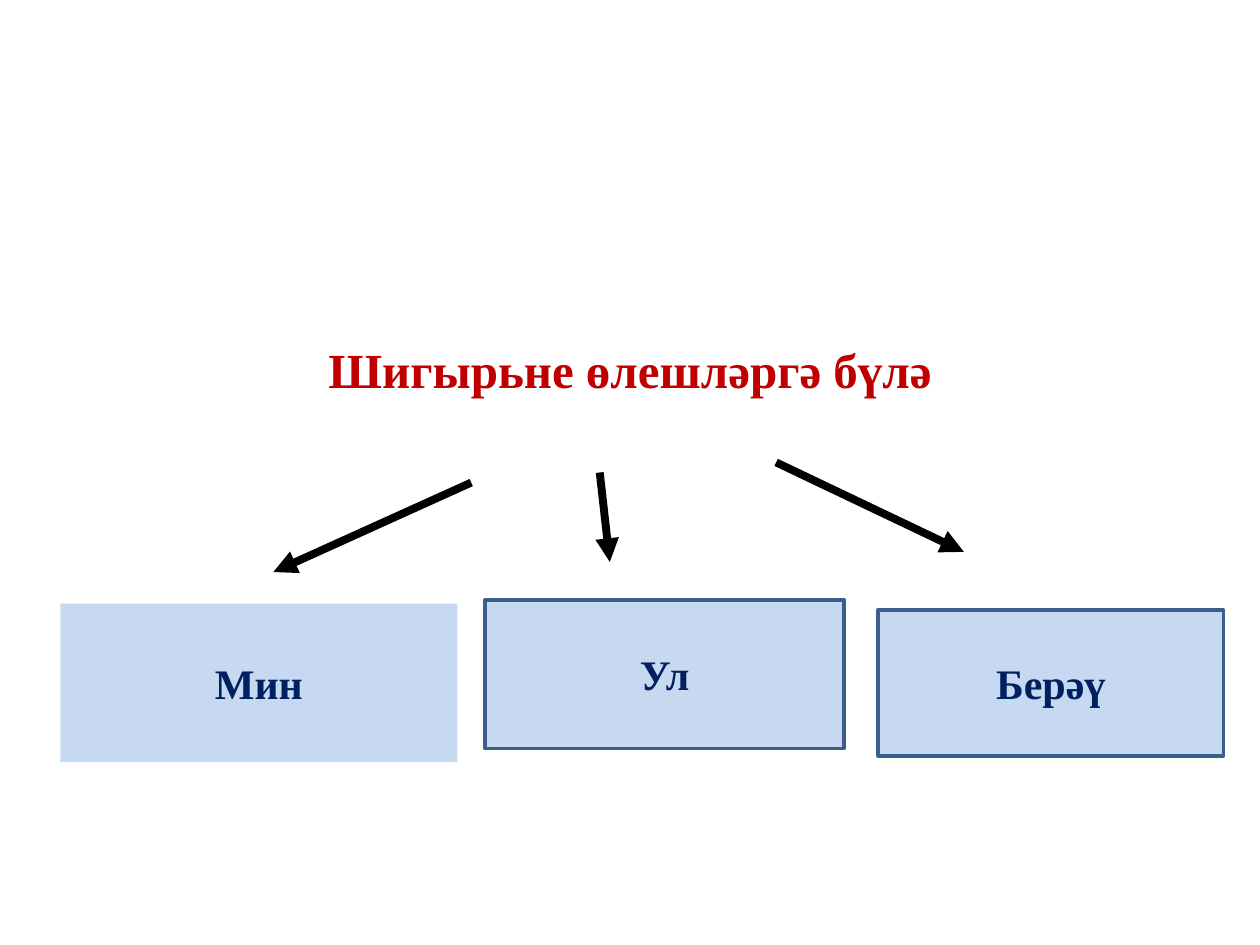
from pptx import Presentation
from pptx.dml.color import RGBColor
from pptx.enum.shapes import MSO_CONNECTOR, MSO_SHAPE
from pptx.enum.text import MSO_ANCHOR, PP_ALIGN
from pptx.oxml.ns import qn
from pptx.util import Inches, Pt
from lxml.etree import SubElement

COLORS = {"heading": "C00000", "label": "002060", "box": "C6D9F1",
          "border": "3A5F8C", "arrow": "000000"}
FONT = "Times New Roman"

HEADING = "Шигырьне өлешләргә бүлә"
HEADING_AREA = (0.75, 0.44, 8.5, 4.98)
PARTS = [
    {"label": "Мин", "area": (0.48, 4.79, 3.15, 1.26), "border": False,
     "arrow": (3.74, 3.83, 2.17, 4.54)},
    {"label": "Ул", "area": (3.85, 4.76, 2.85, 1.18), "border": True,
     "arrow": (4.76, 3.75, 4.84, 4.46)},
    {"label": "Берәү", "area": (6.97, 4.84, 2.74, 1.16), "border": True,
     "arrow": (6.16, 3.67, 7.65, 4.38)},
]


def inches(values):
    return [Inches(value) for value in values]


def color(name):
    return RGBColor.from_string(COLORS[name])


def write(shape, text, *, size, color_name):
    frame = shape.text_frame
    frame.word_wrap = True
    frame.vertical_anchor = MSO_ANCHOR.MIDDLE
    paragraph = frame.paragraphs[0]
    paragraph.alignment = PP_ALIGN.CENTER
    run = paragraph.add_run()
    run.text = text
    run.font.name = FONT
    run.font.size = Pt(size)
    run.font.bold = True
    run.font.color.rgb = color(color_name)


def add_box(slide, part):
    box = slide.shapes.add_shape(MSO_SHAPE.RECTANGLE, *inches(part["area"]))
    box.shadow.inherit = False
    box.fill.solid()
    box.fill.fore_color.rgb = color("box")
    if part["border"]:
        box.line.color.rgb = color("border")
        box.line.width = Pt(2)
    else:
        box.line.fill.background()
    write(box, part["label"], size=24, color_name="label")


def add_arrow(slide, ends):
    arrow = slide.shapes.add_connector(MSO_CONNECTOR.STRAIGHT, *inches(ends))
    arrow.line.color.rgb = color("arrow")
    arrow.line.width = Pt(4.5)
    SubElement(arrow.line._get_or_add_ln(), qn("a:tailEnd"), type="triangle")
    SubElement(arrow._element.spPr, qn("a:effectLst"))


def main():
    deck = Presentation()
    deck.slide_width, deck.slide_height = inches((10, 7.5))
    slide = deck.slides.add_slide(deck.slide_layouts[0])
    subtitle = slide.placeholders[1].element
    subtitle.getparent().remove(subtitle)

    heading = slide.shapes.title
    heading.left, heading.top, heading.width, heading.height = inches(HEADING_AREA)
    write(heading, HEADING, size=28, color_name="heading")

    for part in PARTS:
        add_box(slide, part)
    for part in PARTS:
        add_arrow(slide, part["arrow"])

    deck.save("out.pptx")


if __name__ == "__main__":
    main()
